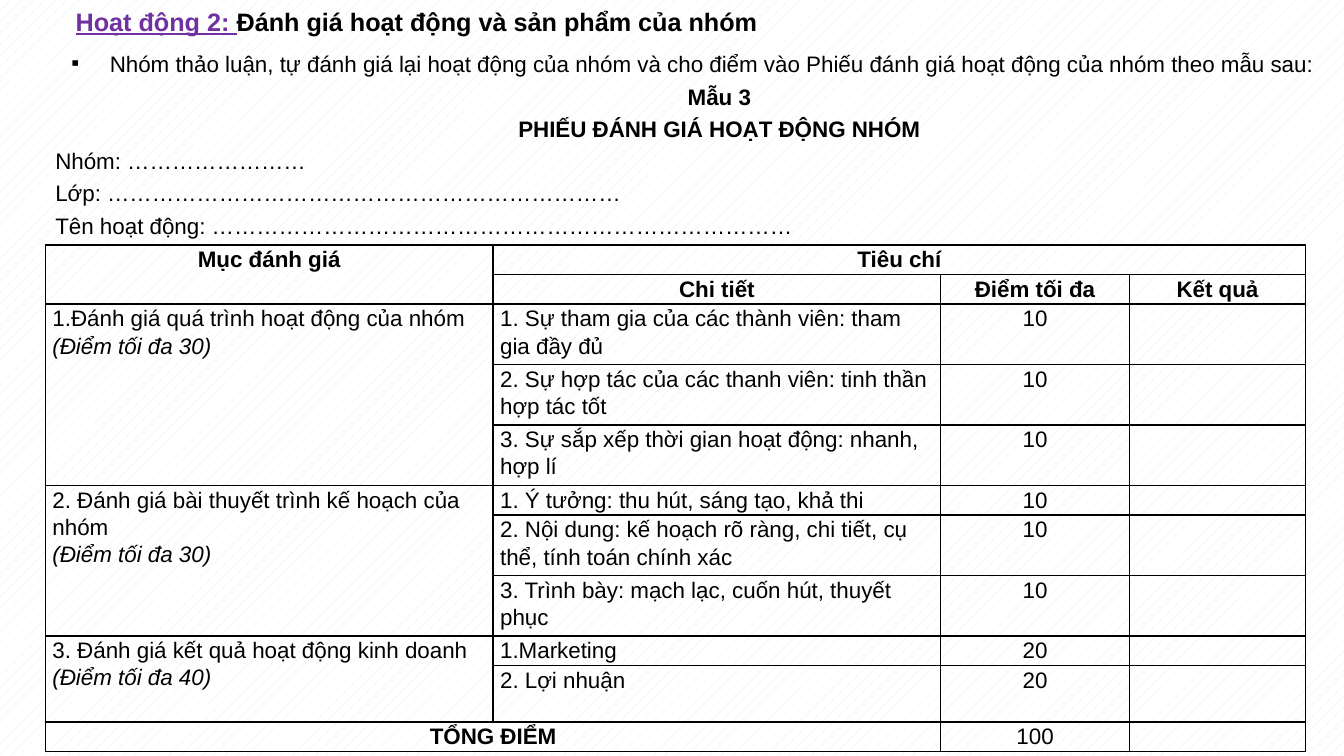
from dataclasses import dataclass

from lxml.etree import SubElement
from pptx import Presentation
from pptx.dml.color import RGBColor
from pptx.enum.dml import MSO_PATTERN
from pptx.enum.text import MSO_ANCHOR, MSO_AUTO_SIZE, PP_ALIGN
from pptx.oxml.ns import qn
from pptx.util import Emu, Inches, Pt

FONT = "Arial"
BLACK, PURPLE, WHITE, PALE_BLUE = "000000", "7030A0", "FFFFFF", "DEEBF7"
WIDTH, HEIGHT = Inches(13.33), Inches(7.5)
TABLE_LEFT, TABLE_TOP = 3.38, 32.4
COLUMNS = (33.31, 33.31, 14.03, 13.13)
SINGLE, DOUBLE, LOOSE = 3.87, 8, 7.47


@dataclass
class Line:
    text: str
    align: PP_ALIGN = PP_ALIGN.LEFT
    bold: bool = False
    italic: bool = False


@dataclass
class Criterion:
    text: str
    points: int
    height: float


@dataclass
class Section:
    name: str
    criteria: list[Criterion]

    def points(self) -> int:
        """Return the most points that the section can give."""
        return sum(criterion.points for criterion in self.criteria)


SECTIONS = [
    Section("1.Đánh giá quá trình hoạt động của nhóm", [
        Criterion("1. Sự tham gia của các thành viên: tham gia đầy đủ", 10, DOUBLE),
        Criterion("2. Sự hợp tác của các thanh viên: tinh thần hợp tác tốt", 10, DOUBLE),
        Criterion("3. Sự sắp xếp thời gian hoạt động: nhanh, hợp lí", 10, DOUBLE),
    ]),
    Section("2. Đánh giá bài thuyết trình kế hoạch của nhóm", [
        Criterion("1. Ý tưởng: thu hút, sáng tạo, khả thi", 10, SINGLE),
        Criterion("2. Nội dung: kế hoạch rõ ràng, chi tiết, cụ thể, tính toán chính xác", 10, DOUBLE),
        Criterion("3. Trình bày: mạch lạc, cuốn hút, thuyết phục", 10, DOUBLE),
    ]),
    Section("3. Đánh giá kết quả hoạt động kinh doanh", [
        Criterion("1.Marketing", 20, SINGLE),
        Criterion("2. Lợi nhuận", 20, LOOSE),
    ]),
]
FORM_LINES = [
    Line("Mẫu 3", PP_ALIGN.CENTER, bold=True),
    Line("PHIẾU ĐÁNH GIÁ HOẠT ĐỘNG NHÓM", PP_ALIGN.CENTER, bold=True),
    Line("Nhóm: ……………………"),
    Line("Lớp: ……………………………………………………………"),
    Line("Tên hoạt động: ……………………………………………………………………"),
]
TASK = Line("Nhóm thảo luận, tự đánh giá lại hoạt động của nhóm và cho điểm vào "
            "Phiếu đánh giá hoạt động của nhóm theo mẫu sau:", PP_ALIGN.JUSTIFY)


def across(percent: float) -> Emu:
    """Turn a percentage of the slide's width into a length."""
    return Emu(round(WIDTH * percent / 100))


def down(percent: float) -> Emu:
    """Turn a percentage of the slide's height into a length."""
    return Emu(round(HEIGHT * percent / 100))


def color(value: str) -> RGBColor:
    """Turn a hex string into a colour."""
    return RGBColor.from_string(value)


def style(span, size: float, shade: str = BLACK, bold: bool = False, italic: bool = False) -> None:
    """Set the font of one run."""
    span.font.name, span.font.size = FONT, Pt(size)
    span.font.bold, span.font.italic = bold, italic
    span.font.color.rgb = color(shade)


def write(frame, lines: list[Line], spacing: float) -> None:
    """Fill a text frame with one paragraph for each line."""
    frame.text = "\n".join(line.text for line in lines)
    for para, line in zip(frame.paragraphs, lines):
        para.alignment, para.line_spacing = line.align, spacing
        for span in para.runs:
            style(span, 16, bold=line.bold, italic=line.italic)


def add_title(page) -> None:
    """Place the heading with its underlined lead-in."""
    title = page.shapes.title
    title.left, title.top = across(4.88), down(0.13)
    title.width, title.height = across(87.55), down(5.33)
    frame = title.text_frame
    frame.word_wrap, frame.auto_size = True, MSO_AUTO_SIZE.NONE
    frame.vertical_anchor = MSO_ANCHOR.TOP
    para = frame.paragraphs[0]
    para.text = "Hoạt động 2: "
    para.alignment, para.line_spacing = PP_ALIGN.JUSTIFY, 1.0
    lead = para.runs[0]
    style(lead, 18, PURPLE, bold=True)
    lead.font.underline = True
    topic = para.add_run()
    topic.text = "Đánh giá hoạt động và sản phẩm của nhóm"
    style(topic, 18, bold=True)


def add_text(page, left: float, top: float, width: float, height: float, lines: list[Line]):
    """Add a wrapped text box and return its frame."""
    box = page.shapes.add_textbox(across(left), down(top), across(width), down(height))
    box.text_frame.word_wrap = True
    write(box.text_frame, lines, 1.2)
    return box.text_frame


def add_bullet(para) -> None:
    """Give a paragraph a small square bullet and a hanging indent."""
    properties = para._p.get_or_add_pPr()
    properties.set("marL", str(Inches(0.38)))
    properties.set("indent", str(-Inches(0.38)))
    SubElement(properties, qn("a:buFont")).set("typeface", FONT)
    SubElement(properties, qn("a:buChar")).set("char", "▪")


def prepare_cell(cell) -> None:
    """Give a cell thin black borders, no fill and tight margins."""
    cell.margin_left = cell.margin_right = Inches(0.07)
    cell.margin_top = cell.margin_bottom = 0
    properties = cell._tc.get_or_add_tcPr()
    for side in ("a:lnL", "a:lnR", "a:lnT", "a:lnB"):
        border = SubElement(properties, qn(side), w=str(Pt(1)))
        fill = SubElement(border, qn("a:solidFill"))
        SubElement(fill, qn("a:srgbClr")).set("val", BLACK)
    cell.fill.background()
    cell.text_frame.paragraphs[0]._p.get_or_add_endParaRPr().set("sz", "1600")


def add_score_table(page) -> None:
    """Draw the score sheet from its sections."""
    criteria = [criterion for section in SECTIONS for criterion in section.criteria]
    heights = [SINGLE, SINGLE, *(criterion.height for criterion in criteria), SINGLE]
    table = page.shapes.add_table(
        len(heights), len(COLUMNS), across(TABLE_LEFT), down(TABLE_TOP),
        across(sum(COLUMNS)), down(sum(heights))).table
    table.first_row = table.horz_banding = False
    for column, width in zip(table.columns, COLUMNS):
        column.width = across(width)
    for row, height in zip(table.rows, heights):
        row.height = down(height)
    for cell in table.iter_cells():
        prepare_cell(cell)

    def put(row: int, column: int, *lines: Line) -> None:
        """Write lines into one cell."""
        write(table.cell(row, column).text_frame, list(lines), 1.1)

    def merge(row: int, column: int, last_row: int, last_column: int) -> None:
        """Join a block of cells."""
        table.cell(row, column).merge(table.cell(last_row, last_column))

    last = len(heights) - 1
    merge(0, 0, 1, 0)
    merge(0, 1, 0, 3)
    merge(last, 0, last, 1)
    headings = [(0, 0, "Mục đánh giá"), (0, 1, "Tiêu chí"), (1, 1, "Chi tiết"),
                (1, 2, "Điểm tối đa"), (1, 3, "Kết quả"), (last, 0, "TỔNG ĐIỂM")]
    for row, column, text in headings:
        put(row, column, Line(text, PP_ALIGN.CENTER, bold=True))
    row = 2
    for section in SECTIONS:
        merge(row, 0, row + len(section.criteria) - 1, 0)
        put(row, 0, Line(section.name), Line(f"(Điểm tối đa {section.points()})", italic=True))
        for criterion in section.criteria:
            put(row, 1, Line(criterion.text))
            put(row, 2, Line(str(criterion.points), PP_ALIGN.CENTER))
            row += 1
    total = sum(section.points() for section in SECTIONS)
    put(last, 2, Line(str(total), PP_ALIGN.CENTER))


def main() -> None:
    """Build the slide and save it."""
    deck = Presentation()
    deck.slide_width, deck.slide_height = WIDTH, HEIGHT
    page = deck.slides.add_slide(deck.slide_layouts[5])
    backdrop = page.background.fill
    backdrop.patterned()
    backdrop.pattern = MSO_PATTERN.PERCENT_10
    backdrop.fore_color.rgb, backdrop.back_color.rgb = color(PALE_BLUE), color(WHITE)
    add_title(page)
    add_bullet(add_text(page, 4.58, 5.2, 97.82, 5.6, [TASK]).paragraphs[0])
    add_text(page, TABLE_LEFT, 9.6, 100.3, 22.93, FORM_LINES)
    add_score_table(page)
    deck.save("out.pptx")


if __name__ == "__main__":
    main()
